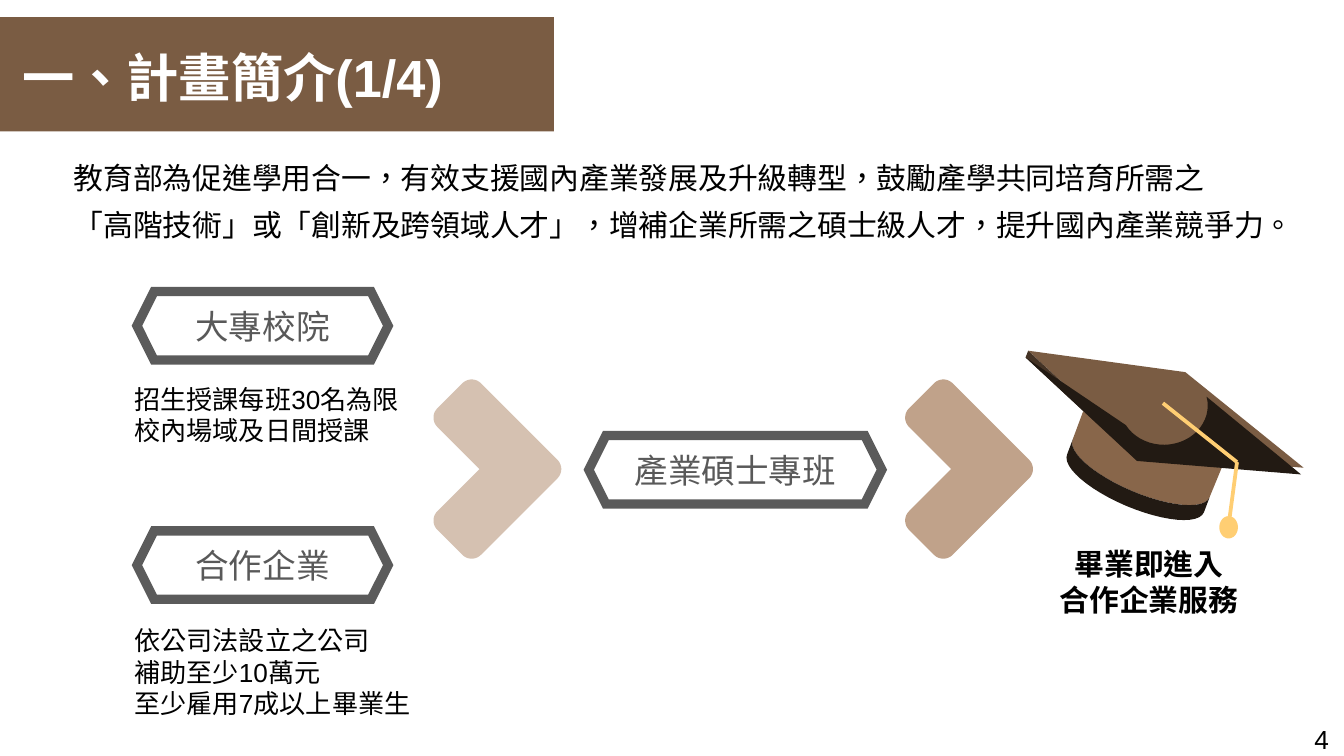
"""Build the programme overview slide with its flow from partners to graduates."""
from math import cos, radians, sin

from lxml.etree import SubElement
from pptx import Presentation
from pptx.dml.color import RGBColor
from pptx.enum.shapes import MSO_CONNECTOR, MSO_SHAPE
from pptx.enum.text import MSO_ANCHOR, MSO_AUTO_SIZE, PP_ALIGN
from pptx.oxml.ns import qn
from pptx.util import Pt

ink = RGBColor.from_string
BROWN, CROWN, DARK, RIM, GOLD = "7A5C43", "88664A", "221A13", "443325", "FFCE73"
GREY, TEXT, WHITE, BLACK = "5B5B5B", "595959", "FFFFFF", "000000"
SAND, TAN = "D5C1B1", "C0A28A"
LATIN, HAN = "Arial", "Noto Sans CJK SC"


def paint(shape, color):
    shape.shadow.inherit = False
    shape.fill.solid()
    shape.fill.fore_color.rgb = ink(color)
    shape.line.fill.background()


def arc(mid, wide, tall, start, end, tilt=0):
    turn = radians(tilt)
    dots = []
    for step in range(25):
        angle = radians(start + (end - start) * step / 24)
        x, y = wide * cos(angle), tall * sin(angle)
        dots.append((mid[0] + x * cos(turn) - y * sin(turn),
                     mid[1] + x * sin(turn) + y * cos(turn)))
    return dots


deck = Presentation()
deck.slide_width, deck.slide_height = Pt(720), Pt(405)
slide = deck.slides.add_slide(deck.slide_layouts[5])
shapes = slide.shapes

banner = shapes.add_shape(MSO_SHAPE.RECTANGLE, 0, Pt(9.2), Pt(296.8), Pt(61.2))
paint(banner, BROWN)
title = shapes.title
title.left, title.top, title.width, title.height = Pt(-35.2), Pt(17.3), Pt(319.6), Pt(61.2)
shapes._spTree.append(title._element)
frame = title.text_frame
frame.text = "一、計畫簡介(1/4)"
frame.auto_size = MSO_AUTO_SIZE.NONE
frame.vertical_anchor = MSO_ANCHOR.TOP
frame.margin_left = frame.margin_right = frame.margin_top = frame.margin_bottom = Pt(7.2)
head = frame.paragraphs[0]
head.alignment = PP_ALIGN.CENTER
head.font.name, head.font.size, head.font.bold = LATIN, Pt(28), True
head.font.color.rgb = ink(WHITE)

cap = shapes.add_group_shape()
board = west, south, east, north = [(550.8, 187.9), (610.6, 243.4), (698.4, 250.6), (635, 199.4)]
under = [(x - 1.4, y + 3.6) for x, y in board]
brim = arc((611.3, 251), 39.8, 13, 180, 0, tilt=23)
hem = [(x - 3, y + 8) for x, y in brim]
dome = arc((623.5, 217.3), 23.5, 21, -13, 150)
outlines = [
    (cap.shapes, CROWN, brim + [(654.5, 250.6), south, (580.3, 220.3)], 0),
    (cap.shapes, DARK, hem + brim[::-1], 0),
    (cap.shapes, BROWN, board, 0),
    (cap.shapes, RIM, [west, south, under[1], under[0]], 0),
    (cap.shapes, DARK, under[:3] + dome, 0),
]

size, arm, bend = 72, 39, 7
top = 215.3
for left, color in [(216.7, SAND), (469.4, TAN)]:
    near, far = left + bend, left + size - bend
    high, low = top + bend, top + size - bend
    chevron = []
    for mid, start in [((near + arm, high), 180), ((far, high), 270), ((far, low), 0),
                       ((near, low), 90), ((near, high + arm), 180)]:
        chevron += arc(mid, bend, bend, start, start + 90)
    chevron.append((left + arm, top + arm))
    outlines.append((shapes, color, chevron, 315))

for layer, color, dots, turn in outlines:
    fine = [(x * 100, y * 100) for x, y in dots]
    pen = layer.build_freeform(*fine[0], scale=Pt(1) / 100)
    pen.add_line_segments(fine[1:], close=True)
    shape = pen.convert_to_shape()
    paint(shape, color)
    shape.rotation = turn

cord = [(623, 216), (662.7, 247.6), (658.8, 277)]
for start, end in zip(cord, cord[1:]):
    line = cap.shapes.add_connector(MSO_CONNECTOR.STRAIGHT, *map(Pt, start + end))
    line.line.color.rgb, line.line.width = ink(GOLD), Pt(2)
    SubElement(line._element.spPr, qn("a:effectLst"))
tassel = cap.shapes.add_shape(MSO_SHAPE.OVAL, Pt(653.2), Pt(276.5), Pt(10), Pt(12))
paint(tassel, GOLD)

for words, left, top, width in [("合作企業", 73.4, 284.4, 134.6),
                                ("大專校院", 73.4, 156.2, 134.6),
                                ("產業碩士專班", 315.4, 233.3, 157)]:
    box = shapes.add_shape(MSO_SHAPE.HEXAGON, Pt(left), Pt(top), Pt(width), Pt(36.7))
    paint(box, WHITE)
    box.line.color.rgb, box.line.width = ink(GREY), Pt(5)
    SubElement(box._element.spPr.find(qn("a:ln")), qn("a:miter"), lim="800000")
    box.text_frame.text = words
    box.text_frame.vertical_anchor = MSO_ANCHOR.MIDDLE
    line = box.text_frame.paragraphs[0]
    line.alignment = PP_ALIGN.CENTER
    line.font.name, line.font.size = LATIN, Pt(18)
    line.font.color.rgb = ink(TEXT)

notes = [
    ("招生授課每班30名為限\n校內場域及日間授課", 64.8, 201.6, 180, 41, 14, LATIN),
    ("依公司法設立之公司\n補助至少10萬元\n至少雇用7成以上畢業生", 64.8, 331.2, 206.6, 58.3, 14, LATIN),
    ("畢業即進入\n合作企業服務", 552.2, 288.7, 126.7, 46.1, 16, LATIN),
    ("教育部為促進學用合一，有效支援國內產業發展及升級轉型，鼓勵產學共同培育所需之\n"
     "「高階技術」或「創新及跨領域人才」，增補企業所需之碩士級人才，提升國內產業競爭力。",
     32.4, 76.3, 664.6, 55.4, 16, HAN),
    ("4", 697, 383.8, 23, 21.2, 14, LATIN),
]
for words, left, top, width, height, size, font in notes:
    box = shapes.add_textbox(Pt(left), Pt(top), Pt(width), Pt(height))
    box.text_frame.text = words
    box.text_frame.word_wrap = True
    for line in box.text_frame.paragraphs:
        line.font.name, line.font.size = font, Pt(size)
        line.font.color.rgb = ink(BLACK)
        if font == HAN:
            line.line_spacing = Pt(25)
        elif size == 16:
            line.alignment = PP_ALIGN.CENTER
            line.font.bold = True

for run in shapes._spTree.iter(qn("a:r")):
    run.get_or_add_rPr().set("lang", "zh-TW")
    run.get_or_add_rPr().set("altLang", "zh-TW")

deck.save("out.pptx")
